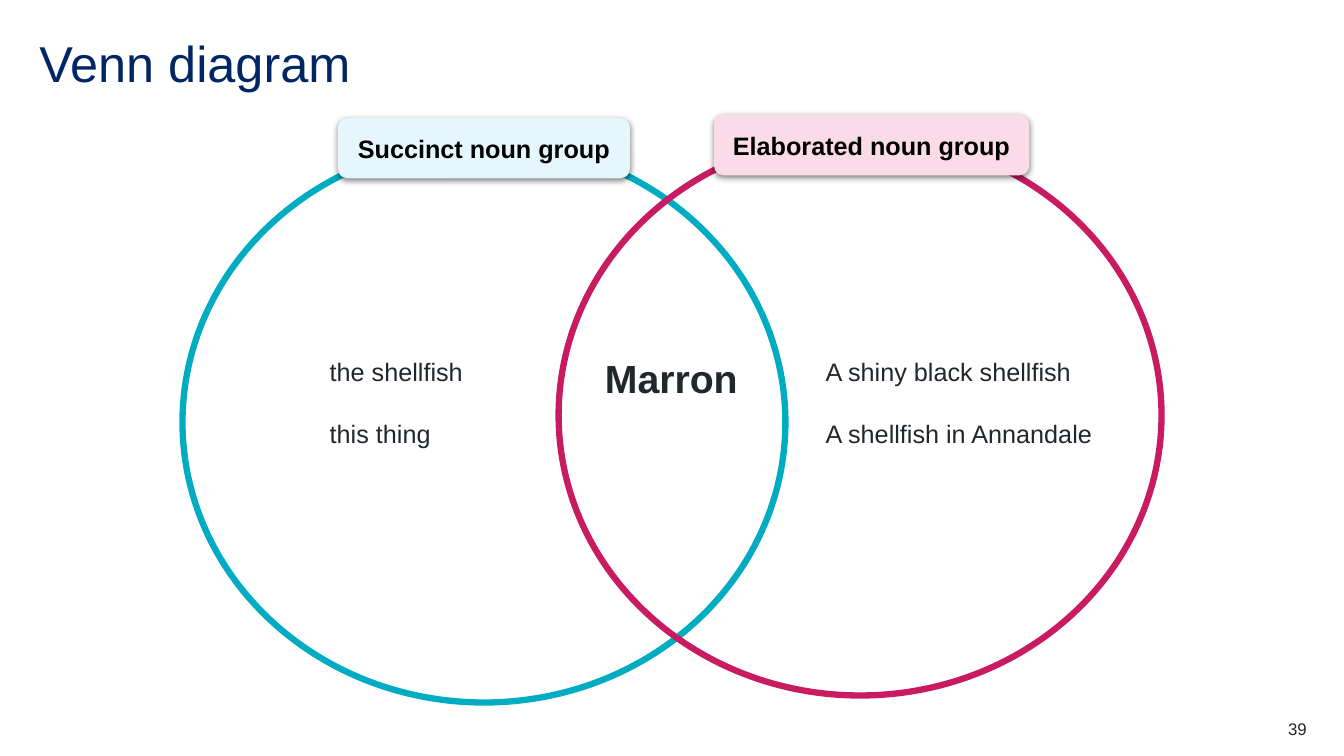
from lxml import etree
from pptx import Presentation
from pptx.dml.color import RGBColor
from pptx.enum.shapes import MSO_SHAPE
from pptx.enum.text import MSO_ANCHOR, PP_ALIGN
from pptx.oxml import parse_xml
from pptx.util import Inches, Pt

ELLIPSE, ROUNDED = MSO_SHAPE.OVAL, MSO_SHAPE.ROUNDED_RECTANGLE
TOP, MIDDLE = MSO_ANCHOR.TOP, MSO_ANCHOR.MIDDLE
LEFT, CENTER, RIGHT = PP_ALIGN.LEFT, PP_ALIGN.CENTER, PP_ALIGN.RIGHT
INK = "22272B"
LABEL_SHADOW = (
    '<a:outerShdw xmlns:a="http://schemas.openxmlformats.org/drawingml/2006/main" '
    'blurRad="57150" dist="19050" dir="5400000" algn="ctr" rotWithShape="0">'
    '<a:srgbClr val="000000"><a:alpha val="50000"/></a:srgbClr></a:outerShdw>'
)


def color(value):
    return RGBColor.from_string(value)


def write(shape, lines, size, ink=INK, bold=False, align=LEFT, anchor=TOP,
          insets=(0, 0), spacing=1.0, after=0):
    frame = shape.text_frame
    across, down = (Inches(inset) for inset in insets)
    frame_format = {"word_wrap": True, "vertical_anchor": anchor,
                    "margin_left": across, "margin_right": across,
                    "margin_top": down, "margin_bottom": down}
    for name, value in frame_format.items():
        setattr(frame, name, value)
    frame.text = "\n".join(lines)
    for paragraph in frame.paragraphs:
        paragraph_format = {"alignment": align, "line_spacing": spacing,
                            "space_before": Pt(0), "space_after": Pt(after)}
        for name, value in paragraph_format.items():
            setattr(paragraph, name, value)
        for run in paragraph.runs:
            font_format = {"name": "Arial", "size": Pt(size), "bold": bold}
            for name, value in font_format.items():
                setattr(run.font, name, value)
            run.font.color.rgb = color(ink)


presentation = Presentation()
presentation.slide_width = Inches(13.33)
presentation.slide_height = Inches(7.5)
slide = presentation.slides.add_slide(presentation.slide_layouts[6])
shapes = slide.shapes

single_texts = [
    ((0.39, 0.39, 11.02, 0.6), "Venn diagram",
     {"size": 36, "ink": "002664", "spacing": 0.9}),
    ((5.87, 3.38, 1.65, 1.12), "Marron",
     {"size": 28, "bold": True, "insets": (0.13, 0.13)}),
    ((12.17, 7.13, 0.79, 0.2), "39", {"size": 12, "align": RIGHT}),
]
for box, text, text_format in single_texts:
    write(shapes.add_textbox(*map(Inches, box)), [text], **text_format)

noun_groups = [
    ("Succinct noun group", (1.81, 1.41), "00ACC2", (3.35, 1.17, 2.9, 0.6), "E5F7FC",
     (3.27, 3.38, 2.32, 1.11), ["the shellfish", "this thing"]),
    ("Elaborated noun group", (5.54, 1.34), "C81B62", (7.08, 1.14, 3.13, 0.6), "FBDBE7",
     (8.19, 3.38, 3.3, 1.11), ["A shiny black shellfish", "A shellfish in Annandale"]),
]
for heading, corner, outline, label_box, tint, examples_box, examples in noun_groups:
    circle = shapes.add_shape(ELLIPSE, *map(Inches, (*corner, 5.98, 5.56)))
    circle.shadow.inherit = False
    circle.fill.background()
    circle.line.color.rgb = color(outline)
    circle.line.width = Pt(4.5)

    label = shapes.add_shape(ROUNDED, *map(Inches, label_box))
    label.fill.solid()
    label.fill.fore_color.rgb = color(tint)
    label.line.fill.background()
    label.shadow.inherit = False
    effects = next(label.element.spPr.iterchildren("{*}effectLst"))
    etree.ElementBase.append(effects, parse_xml(LABEL_SHADOW))
    write(label, [heading], 18, ink="000000", bold=True, align=CENTER,
          anchor=MIDDLE, insets=(0.09, 0.04))

    write(shapes.add_textbox(*map(Inches, examples_box)), examples, 18,
          spacing=1.5, after=12)

presentation.save("out.pptx")
